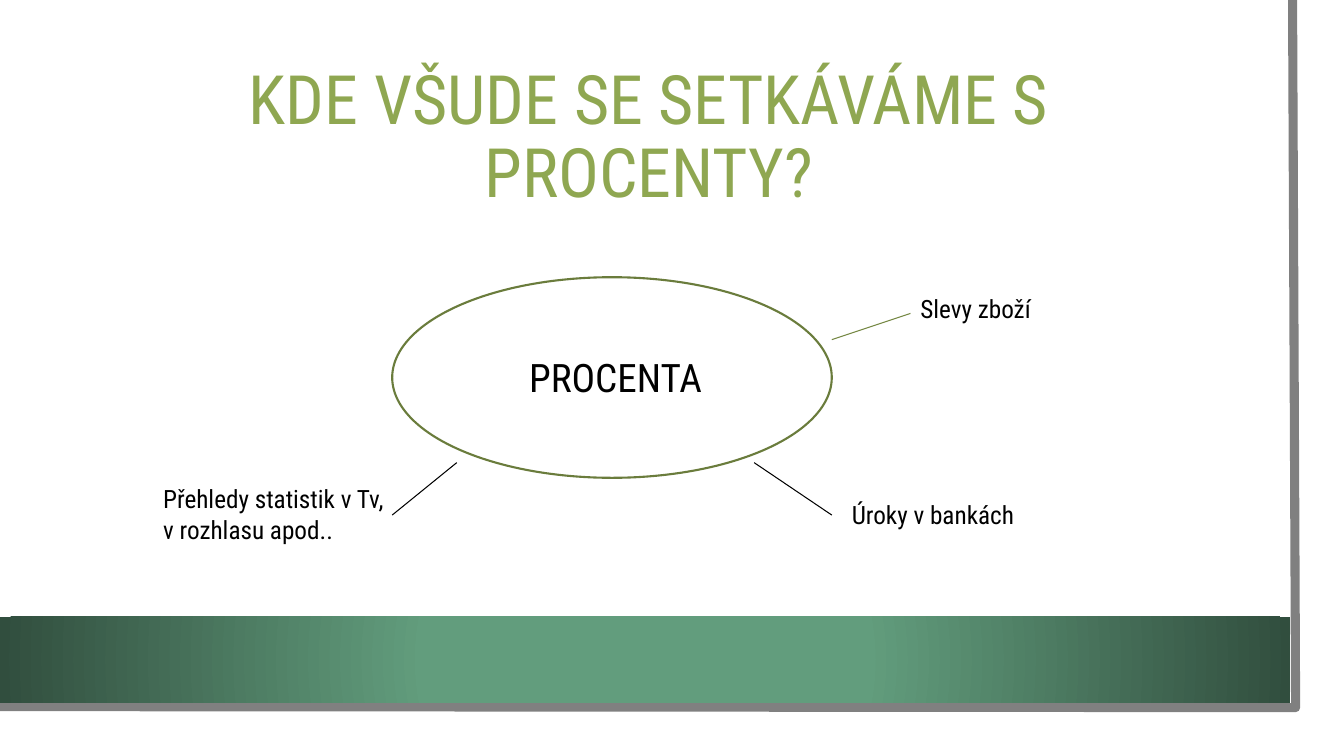
from dataclasses import dataclass

from lxml import etree
from pptx import Presentation
from pptx.dml.color import RGBColor
from pptx.enum.shapes import MSO_CONNECTOR, MSO_SHAPE
from pptx.enum.text import MSO_ANCHOR, MSO_AUTO_SIZE, PP_ALIGN
from pptx.oxml import parse_xml
from pptx.oxml.ns import nsdecls, qn
from pptx.util import Inches, Pt

RECTANGLE, OVAL = MSO_SHAPE.RECTANGLE, MSO_SHAPE.OVAL
STRAIGHT = MSO_CONNECTOR.STRAIGHT
MIDDLE = MSO_ANCHOR.MIDDLE
NO_AUTOFIT = MSO_AUTO_SIZE.NONE
CENTER, LEFT = PP_ALIGN.CENTER, PP_ALIGN.LEFT

WHITE = RGBColor(0xFF, 0xFF, 0xFF)
BLACK = RGBColor(0, 0, 0)
GRAY = RGBColor(0x80, 0x80, 0x80)
BAND_GREEN = RGBColor(0x62, 0x9D, 0x7D)
BAND_DARK = RGBColor(0x31, 0x4E, 0x3E)
TITLE_GREEN = RGBColor(0x8F, 0xA7, 0x51)
OVAL_GREEN = RGBColor(0x6A, 0x7C, 0x3C)
BRANCH_GREEN = RGBColor(0x73, 0x86, 0x41)
FONT = "Roboto Condensed"


@dataclass
class Label:
    text: str
    left: float
    top: float
    width: float
    height: float
    size: float = 18


@dataclass
class Branch:
    x1: float
    y1: float
    x2: float
    y2: float
    color: RGBColor = BLACK


LABELS = [
    Label("PROCENTA", 5.15, 3.46, 2.42, 0.57, 28),
    Label("Přehledy statistik v Tv, v rozhlasu apod..", 1.52, 4.75, 2.5, 0.71),
    Label("Úroky v bankách", 8.35, 4.9, 2.56, 0.4),
    Label("Slevy zboží", 9.03, 2.86, 1.4, 0.4),
]
BRANCHES = [
    Branch(7.48, 4.59, 8.25, 5.11),
    Branch(4.53, 4.59, 3.89, 5.11),
    Branch(8.25, 3.37, 9.03, 3.11, BRANCH_GREEN),
]


def write(shape, text: str, size: float, color: RGBColor, align) -> None:
    tf = shape.text_frame
    tf.word_wrap = True
    p = tf.paragraphs[0]
    p.alignment = align
    r = p.add_run()
    r.text = text
    for name, value in {"name": FONT, "size": Pt(size), "bold": False}.items():
        setattr(r.font, name, value)
    r.font.color.rgb = color


def add_shape(s, kind, left: float, top: float, width: float, height: float):
    sp = s.shapes.add_shape(kind, Inches(left), Inches(top), Inches(width), Inches(height))
    sp.shadow.inherit = False
    return sp


def add_label(s, label: Label) -> None:
    box = s.shapes.add_textbox(
        Inches(label.left), Inches(label.top), Inches(label.width), Inches(label.height))
    write(box, label.text, label.size, BLACK, LEFT)


def add_branch(s, branch: Branch) -> None:
    line = s.shapes.add_connector(
        STRAIGHT, Inches(branch.x1), Inches(branch.y1), Inches(branch.x2), Inches(branch.y2))
    line.line.color.rgb = branch.color
    line.line.width = Pt(0.75)
    etree.SubElement(line._element.spPr, qn("a:effectLst"))


def add_frame(s) -> None:
    page = add_shape(s, RECTANGLE, 0, 0, 13.1, 7.27)
    page.fill.solid()
    page.fill.fore_color.rgb = WHITE
    page.line.fill.background()

    builder = s.shapes.build_freeform(Inches(12.82), 0)
    builder.add_line_segments(
        [(Inches(12.85), Inches(7.02)), (Inches(-0.03), Inches(7.01))], close=False)
    edge = builder.convert_to_shape()
    edge.shadow.inherit = False
    edge.fill.background()
    edge.line.color.rgb = GRAY
    edge.line.width = Pt(6.5)

    band = add_shape(s, RECTANGLE, 0, 6.12, 12.8, 0.85)
    band.line.fill.background()
    band.fill.gradient()
    stops = [(0.34, BAND_GREEN), (1, BAND_DARK)]
    for stop, (position, color) in zip(band.fill.gradient_stops, stops):
        stop.position = position
        stop.color.rgb = color
    lin = band._element.spPr.find(".//" + qn("a:lin"))
    lin.getparent().replace(lin, parse_xml(
        f'<a:path {nsdecls("a")} path="circle">'
        '<a:fillToRect l="50000" t="50000" r="50000" b="50000"/></a:path>'))


def add_title(s) -> None:
    title = s.shapes.title
    title._element.getparent().append(title._element)
    place = {"left": 0.75, "top": 0.75, "width": 11.37, "height": 1.26}
    for name, value in place.items():
        setattr(title, name, Inches(value))
    write(title, "KDE VŠUDE SE SETKÁVÁME S PROCENTY?", 48.6, TITLE_GREEN, CENTER)
    tf = title.text_frame
    tf.auto_size = NO_AUTOFIT
    tf.vertical_anchor = MIDDLE
    tf.paragraphs[0].line_spacing = 0.9


def main() -> None:
    prs = Presentation()
    prs.slide_width, prs.slide_height = Inches(13.33), Inches(7.5)
    s = prs.slides.add_slide(prs.slide_layouts[5])
    add_frame(s)
    add_title(s)
    oval = add_shape(s, OVAL, 3.89, 2.75, 4.36, 1.99)
    oval.fill.background()
    oval.line.color.rgb = OVAL_GREEN
    oval.line.width = Pt(1.5)
    for label in LABELS:
        add_label(s, label)
    for branch in BRANCHES:
        add_branch(s, branch)
    prs.save("out.pptx")


if __name__ == "__main__":
    main()
